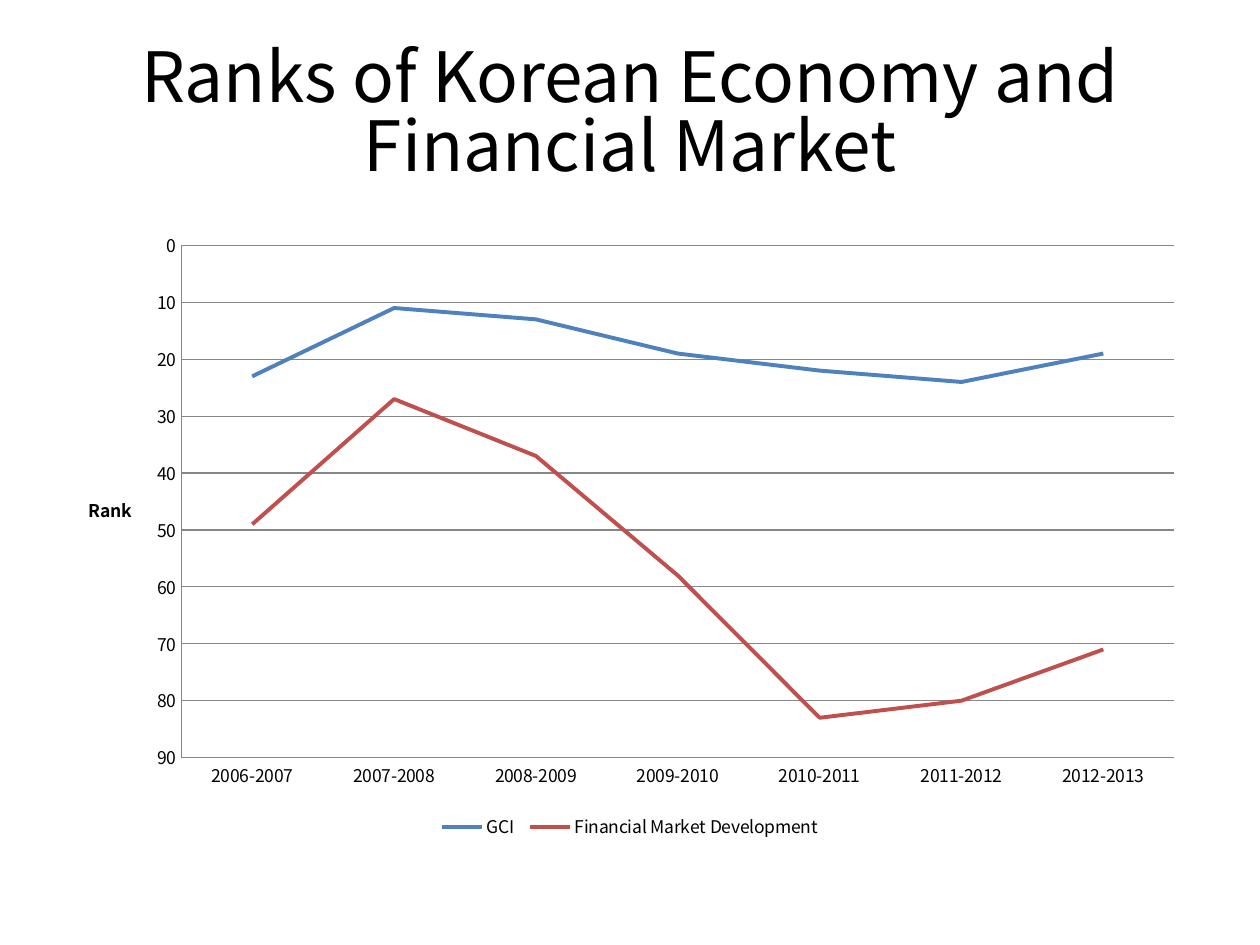
from pptx import Presentation
from pptx.chart.data import CategoryChartData
from pptx.dml.color import RGBColor
from pptx.enum.chart import XL_AXIS_CROSSES, XL_CHART_TYPE, XL_LEGEND_POSITION, XL_TICK_MARK
from pptx.enum.text import MSO_ANCHOR, PP_ALIGN
from pptx.util import Inches, Pt

FONT = "Noto Sans CJK KR"
BLACK = RGBColor(0x00, 0x00, 0x00)
GRAY = RGBColor(0x86, 0x86, 0x86)
BLUE = RGBColor(0x4F, 0x81, 0xBD)
RED = RGBColor(0xC0, 0x50, 0x4D)

YEARS = [f"{year}-{year + 1}" for year in range(2006, 2013)]
RANKS = [
    ("GCI ", [23, 11, 13, 19, 22, 24, 19], BLUE),
    ("Financial Market Development", [49, 27, 37, 58, 83, 80, 71], RED),
]


def style_font(font, size, bold=False):
    """Apply the slide's typeface in black."""
    font.name = FONT
    font.size = Pt(size)
    font.bold = bold
    font.color.rgb = BLACK


def style_line(line, color, width):
    """Give a line its colour and width."""
    line.color.rgb = color
    line.width = Pt(width)


def add_title(s, text):
    """Add the centred slide title."""
    tf = s.shapes.add_textbox(Inches(0.5), Inches(0.3), Inches(9), Inches(1.25)).text_frame
    tf.word_wrap = True
    tf.vertical_anchor = MSO_ANCHOR.MIDDLE
    p = tf.paragraphs[0]
    p.alignment = PP_ALIGN.CENTER
    p.line_spacing = 0.83
    r = p.add_run()
    r.text = text
    style_font(r.font, 39.6)


def style_axes(chart):
    """Reverse the rank axis, keep the years at the bottom and label the ranks."""
    for axis in (chart.category_axis, chart.value_axis):
        axis.major_tick_mark = axis.minor_tick_mark = XL_TICK_MARK.NONE
        style_line(axis.format.line, GRAY, 0.75)
    axis = chart.value_axis
    axis.reverse_order = True
    axis.crosses = XL_AXIS_CROSSES.MAXIMUM
    axis.minimum_scale, axis.maximum_scale, axis.major_unit = 0, 90, 10
    axis.has_major_gridlines = True
    style_line(axis.major_gridlines.format.line, GRAY, 0.75)
    tf = axis.axis_title.text_frame
    tf._txBody.bodyPr.set("rot", "0")
    tf._txBody.bodyPr.set("vert", "horz")
    r = tf.paragraphs[0].add_run()
    r.text = "Rank"
    style_font(r.font, 10, bold=True)


def add_rank_chart(s):
    """Add the line chart of ranks by year."""
    data = CategoryChartData()
    data.categories = YEARS
    for name, values, _ in RANKS:
        data.add_series(name, values)
    chart = s.shapes.add_chart(
        XL_CHART_TYPE.LINE, Inches(0.5), Inches(1.75), Inches(9), Inches(4.95), data
    ).chart
    style_font(chart.font, 10)
    chart.has_title = False
    chart.has_legend = True
    chart.legend.position = XL_LEGEND_POSITION.BOTTOM
    chart.legend.include_in_layout = False
    chart.plots[0].vary_by_categories = False
    for series, (_, _, color) in zip(chart.plots[0].series, RANKS):
        series.smooth = False
        style_line(series.format.line, color, 2.25)
    style_axes(chart)


def main():
    """Build and save the slide."""
    prs = Presentation()
    prs.slide_width, prs.slide_height = Inches(10), Inches(7.5)
    s = prs.slides.add_slide(prs.slide_layouts[6])
    add_title(s, "Ranks of Korean Economy and Financial Market")
    add_rank_chart(s)
    prs.save("out.pptx")


if __name__ == "__main__":
    main()
